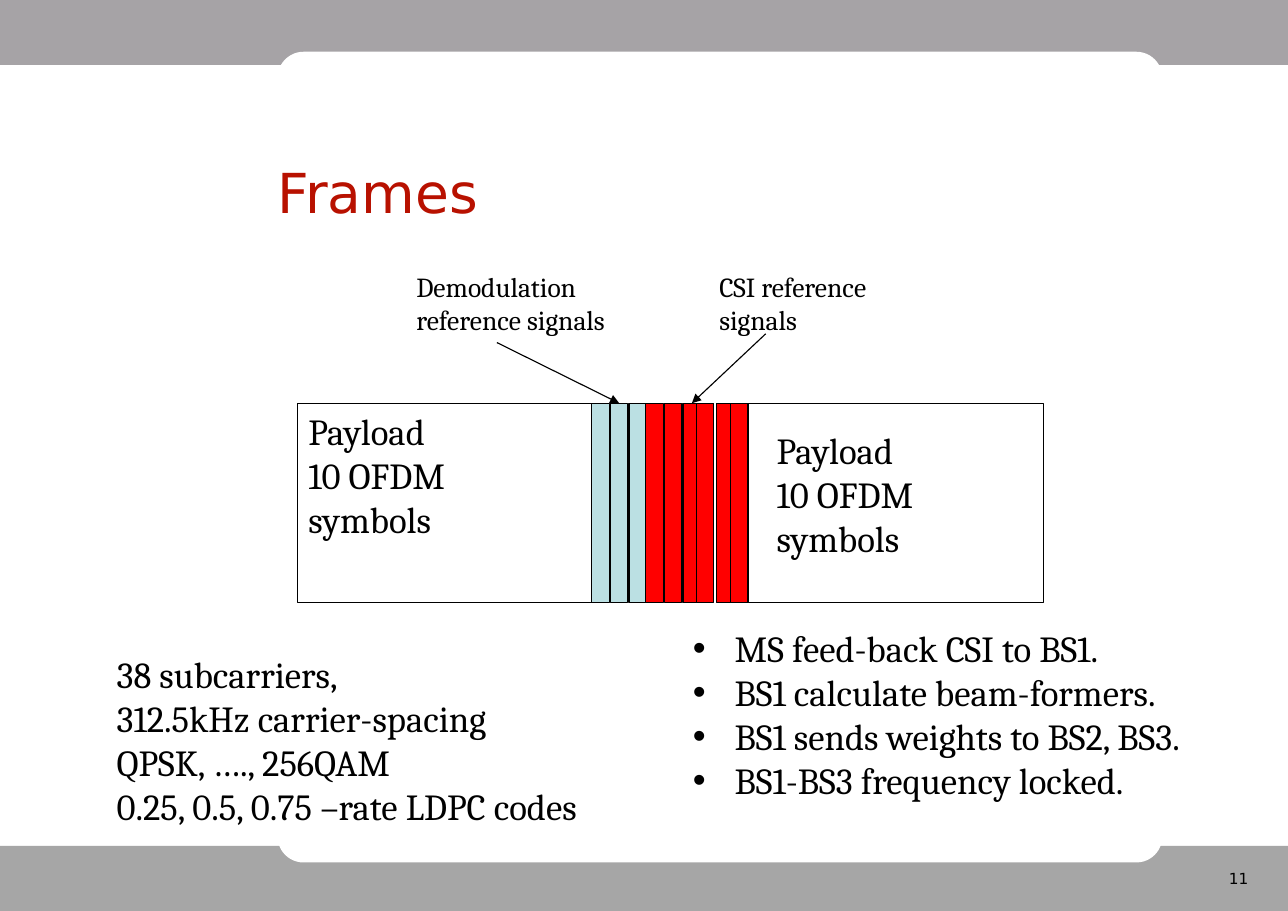
from dataclasses import dataclass

from lxml.etree import SubElement
from pptx import Presentation
from pptx.dml.color import RGBColor
from pptx.enum.shapes import MSO_CONNECTOR, MSO_SHAPE
from pptx.enum.text import MSO_ANCHOR, PP_ALIGN
from pptx.oxml.ns import qn
from pptx.shapes.autoshape import Shape
from pptx.slide import Slide
from pptx.util import Inches, Pt


@dataclass(frozen=True)
class Theme:
    top_band: str = "A6A3A6"
    bottom_band: str = "A6A6A6"
    panel: str = "FFFFFF"
    title: str = "B81100"
    ink: str = "000000"
    demodulation: str = "BBE0E3"
    csi: str = "FF0000"
    body_font: str = "Cambria"
    title_font: str = "DejaVu Sans"
    title_size: float = 36
    body_size: float = 24
    label_size: float = 18
    number_size: float = 10
    line_width: float = 0.75


THEME = Theme()


@dataclass(frozen=True)
class Box:
    left: float
    top: float
    width: float
    height: float
    fill: str | None = None
    line: str | None = None
    kind: MSO_SHAPE = MSO_SHAPE.RECTANGLE


@dataclass(frozen=True)
class Text:
    left: float
    top: float
    width: float
    height: float
    lines: tuple[str, ...]
    size: float = THEME.body_size
    font: str = THEME.body_font
    color: str = THEME.ink
    align: PP_ALIGN = PP_ALIGN.LEFT
    anchor: MSO_ANCHOR = MSO_ANCHOR.TOP
    inset: tuple[float, float] = (0.1, 0.05)
    bullets: bool = False


def add_box(s: Slide, box: Box) -> Shape:
    sp = s.shapes.add_shape(box.kind, Inches(box.left), Inches(box.top),
                            Inches(box.width), Inches(box.height))
    sp.shadow.inherit = False
    if box.fill:
        sp.fill.solid()
        sp.fill.fore_color.rgb = RGBColor.from_string(box.fill)
    else:
        sp.fill.background()
    if box.line:
        sp.line.color.rgb = RGBColor.from_string(box.line)
        sp.line.width = Pt(THEME.line_width)
    else:
        sp.line.fill.background()
    return sp


def add_text(s: Slide, text: Text) -> None:
    sp = s.shapes.add_textbox(Inches(text.left), Inches(text.top),
                              Inches(text.width), Inches(text.height))
    tf = sp.text_frame
    tf.word_wrap = True
    tf.vertical_anchor = text.anchor
    tf.margin_left = tf.margin_right = Inches(text.inset[0])
    tf.margin_top = tf.margin_bottom = Inches(text.inset[1])
    tf.text = "\n".join(text.lines)
    for p in tf.paragraphs:
        p.alignment = text.align
        if text.bullets:
            pPr = p._p.get_or_add_pPr()
            pPr.set("marL", str(Inches(0.38)))
            pPr.set("indent", str(-Inches(0.38)))
            SubElement(pPr, qn("a:buFont"), typeface="Arial")
            SubElement(pPr, qn("a:buChar"), char="•")
        for r in p.runs:
            r.font.name = text.font
            r.font.size = Pt(text.size)
            r.font.color.rgb = RGBColor.from_string(text.color)


def add_arrow(s: Slide, x: float, y: float, target: Shape) -> None:
    """Draw an arrow from a point to the top middle of the target."""
    line = s.shapes.add_connector(MSO_CONNECTOR.STRAIGHT, Inches(x), Inches(y),
                                  target.left + target.width // 2, target.top)
    line.end_connect(target, 0)
    line.line.color.rgb = RGBColor.from_string(THEME.ink)
    line.line.width = Pt(THEME.line_width)
    SubElement(line.line._get_or_add_ln(), qn("a:tailEnd"), type="triangle")
    SubElement(line._element.spPr, qn("a:effectLst"))


SLIDE_W, SLIDE_H = 11.69, 8.27
BAND_H = 0.59
FRAME_TOP, FRAME_H = 3.66, 1.81
PAYLOAD_W, SYMBOL_W = 2.68, 0.16
PAYLOAD_LEFTS = (2.7, 6.79)
DEMODULATION_LEFTS = (5.37, 5.54, 5.71)
CSI_LEFTS = (5.86, 6.03, 6.2, 6.32, 6.5, 6.63)
PAYLOAD = ("Payload", "10 OFDM symbols")

BACKGROUND = (
    Box(0, 0, SLIDE_W, BAND_H, THEME.top_band),
    Box(0, SLIDE_H - BAND_H, SLIDE_W, BAND_H, THEME.bottom_band),
)
PANEL = Box(2.52, 0.47, 8.03, 7.36, THEME.panel, kind=MSO_SHAPE.ROUNDED_RECTANGLE)

TEXTS = (
    Text(9, 7.83, 2.44, 0.3, ("11",), THEME.number_size, THEME.title_font,
         align=PP_ALIGN.RIGHT, inset=(0.11, 0.06)),
    Text(2.41, 1.05, 8.03, 1.38, ("Frames",), THEME.title_size, THEME.title_font,
         THEME.title, anchor=MSO_ANCHOR.MIDDLE, inset=(0.11, 0.06)),
    Text(2.7, 3.66, 2.36, 1.31, PAYLOAD),
    Text(6.95, 3.83, 2.36, 1.31, PAYLOAD),
    Text(6.43, 2.4, 2.19, 0.71, ("CSI reference", "signals"), THEME.label_size),
    Text(3.68, 2.4, 2.19, 0.71, ("Demodulation reference signals",), THEME.label_size),
    Text(0.96, 5.87, 5.39, 1.72, (
        "38 subcarriers,",
        "312.5kHz carrier-spacing",
        "QPSK, …., 256QAM",
        "0.25, 0.5, 0.75 –rate LDPC codes",
    )),
    Text(6.19, 5.63, 4.85, 2.64, (
        "MS feed-back CSI to BS1.",
        "BS1 calculate beam-formers.",
        "BS1 sends weights to BS2, BS3.",
        "BS1-BS3 frequency locked.",
    ), bullets=True),
)


def add_frame_part(s: Slide, left: float, width: float, fill: str | None = None) -> Shape:
    return add_box(s, Box(left, FRAME_TOP, width, FRAME_H, fill, THEME.ink))


def main() -> None:
    prs = Presentation()
    prs.slide_width, prs.slide_height = Inches(SLIDE_W), Inches(SLIDE_H)
    s = prs.slides.add_slide(prs.slide_layouts[6])

    # Grey bands and the white panel
    for band in BACKGROUND:
        add_box(s, band)
    add_box(s, PANEL).adjustments[0] = 0.032

    # Frame: payload, reference symbols, payload
    add_frame_part(s, PAYLOAD_LEFTS[0], PAYLOAD_W)
    demodulation = [add_frame_part(s, x, SYMBOL_W, THEME.demodulation)
                    for x in DEMODULATION_LEFTS]
    csi = [add_frame_part(s, x, SYMBOL_W, THEME.csi) for x in CSI_LEFTS]
    add_frame_part(s, PAYLOAD_LEFTS[1], PAYLOAD_W)

    # Title, labels and notes on the system
    for text in TEXTS:
        add_text(s, text)

    # Arrows from the labels to the symbols
    add_arrow(s, 6.95, 3.03, csi[2])
    add_arrow(s, 4.51, 3.11, demodulation[1])

    prs.save("out.pptx")


if __name__ == "__main__":
    main()
